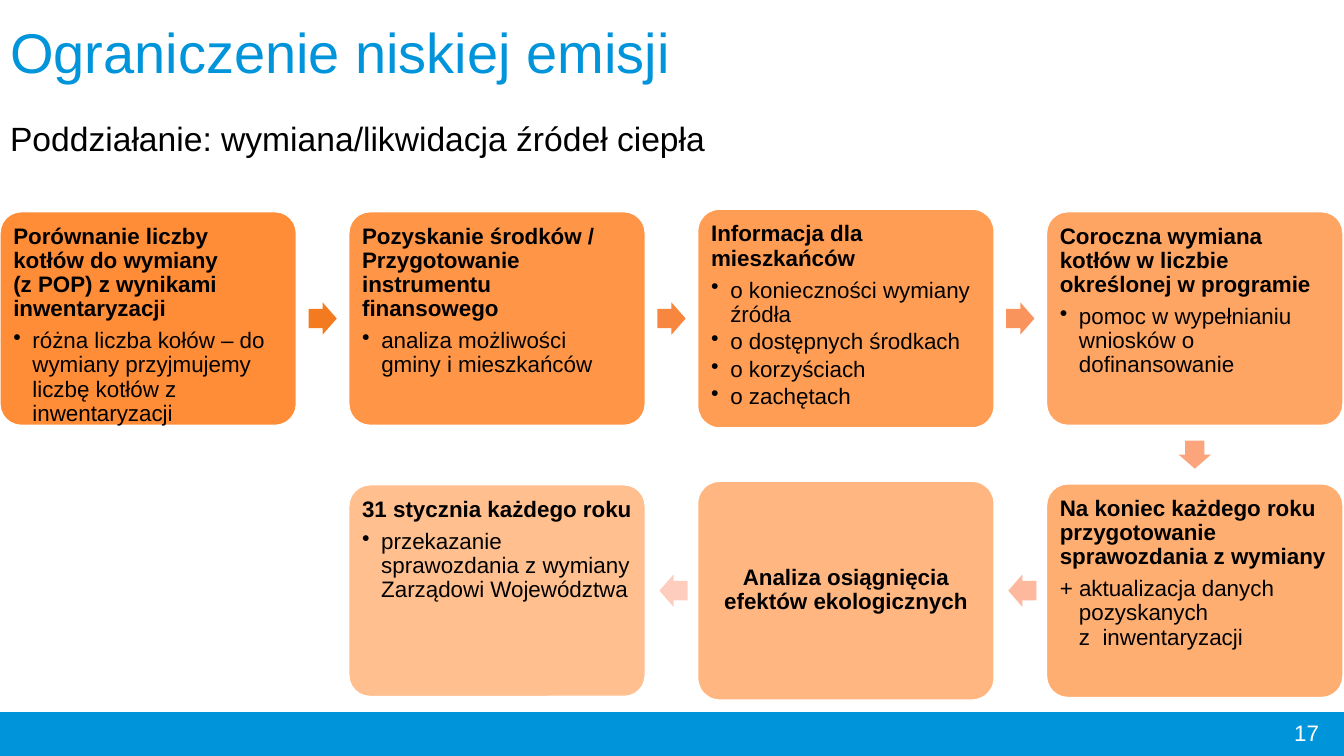
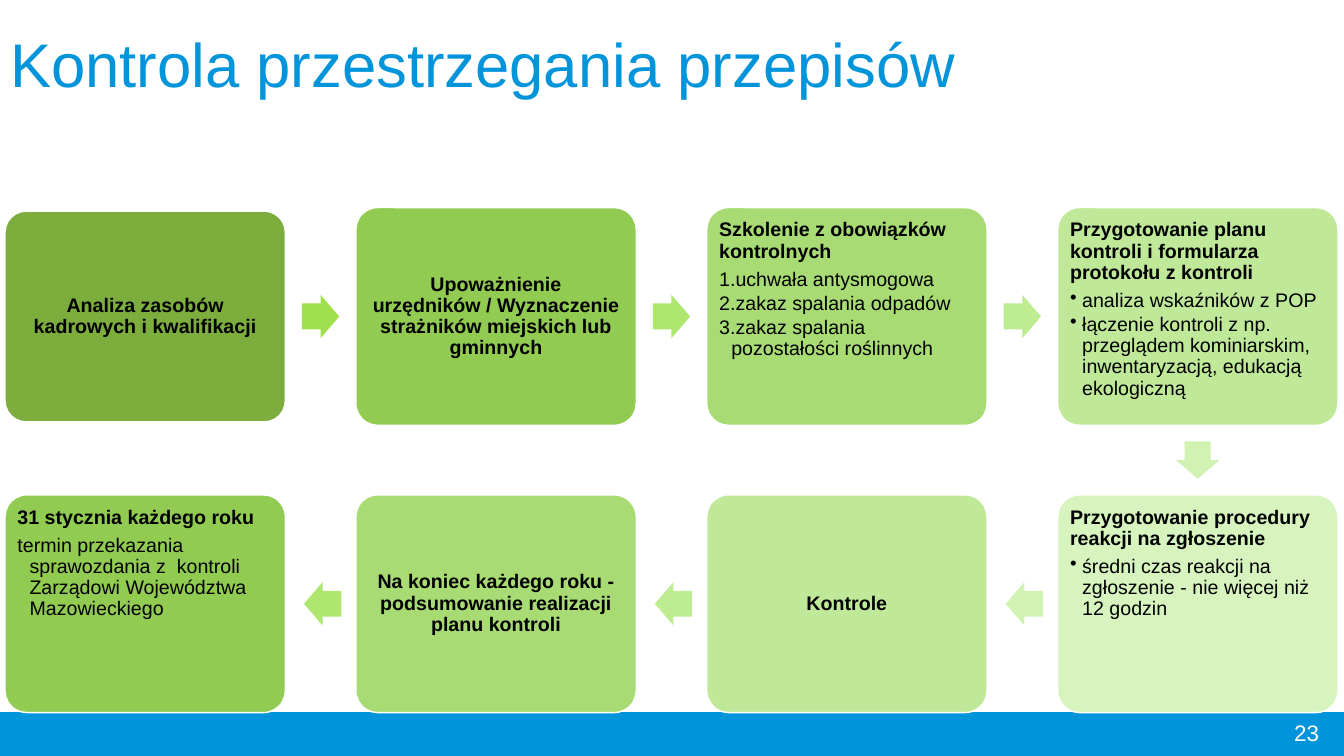
from dataclasses import dataclass

from pptx import Presentation
from pptx.dml.color import RGBColor
from pptx.enum.shapes import MSO_SHAPE
from pptx.enum.text import MSO_ANCHOR, MSO_AUTO_SIZE, PP_ALIGN
from pptx.oxml.xmlchemy import OxmlElement
from pptx.shapes.autoshape import Shape
from pptx.slide import Slide
from pptx.text.text import TextFrame
from pptx.util import Inches, Pt

RECTANGLE = MSO_SHAPE.RECTANGLE
ROUNDED = MSO_SHAPE.ROUNDED_RECTANGLE
RIGHT_ARROW = MSO_SHAPE.RIGHT_ARROW
LEFT_ARROW = MSO_SHAPE.LEFT_ARROW
DOWN_ARROW = MSO_SHAPE.DOWN_ARROW
TOP, MIDDLE = MSO_ANCHOR.TOP, MSO_ANCHOR.MIDDLE
LEFT, CENTER, RIGHT = PP_ALIGN.LEFT, PP_ALIGN.CENTER, PP_ALIGN.RIGHT
NO_AUTOFIT = MSO_AUTO_SIZE.NONE

FONT = "Arial"
COLORS = {
    "blue": "0094DA",
    "orange": "FF8021",
    "black": "000000",
    "white": "FFFFFF",
    "green_1": "7CAD3D",
    "green_2": "92CB51",
    "green_3": "A8DB73",
    "green_4": "BFE998",
    "green_5": "D7F4BF",
}
SLIDE_WIDTH, SLIDE_HEIGHT = 13.33, 7.5
BAND_TOP = 7.07
COLUMNS = 4


@dataclass
class Step:
    heading: str
    height: float
    fill: str
    items: tuple[str, ...] = ()
    bullet: str = "•"
    opacity: int = 100


@dataclass
class Flow:
    left: float
    pitch: float
    box_width: float
    row_centers: tuple[float, float]
    arrow_length: float
    arrow_breadth: float
    font_size: int
    inset: float
    indent: float
    arrow_colors: tuple[str, ...]
    steps: tuple[Step, ...]


@dataclass
class TitleLine:
    text: str
    size: int
    color: str
    space_before: float = 0


@dataclass
class Page:
    number: str
    title_top: float
    title_width: float
    title_height: float
    title_lines: tuple[TitleLine, ...]
    flow: Flow


def rgb(color: str) -> RGBColor:
    return RGBColor.from_string(COLORS.get(color, color))


def add_text(frame: TextFrame, text: str, *, size: float, color: str = "black",
             bold: bool = False, align: PP_ALIGN = LEFT, line_spacing: float = 0.9,
             space_before: float = 0, space_after: float = 0,
             indent: float = 0, bullet: str = "") -> None:
    first = frame.paragraphs[0]
    paragraph = frame.add_paragraph() if first.runs else first
    paragraph.text = text
    properties = paragraph._p.get_or_add_pPr()
    if indent:
        properties.set("marL", str(Inches(indent)))
        properties.set("indent", str(Inches(-indent)))
    if bullet == "1.":
        marker = OxmlElement("a:buAutoNum")
        marker.set("type", "arabicPeriod")
    elif bullet:
        marker = OxmlElement("a:buChar")
        marker.set("char", bullet)
    else:
        marker = OxmlElement("a:buNone")
    properties.append(marker)
    paragraph.alignment = align
    paragraph.line_spacing = line_spacing
    paragraph.space_before = Pt(space_before)
    paragraph.space_after = Pt(space_after)
    for run in paragraph.runs:
        run.font.name = FONT
        run.font.size = Pt(size)
        run.font.bold = bold
        run.font.color.rgb = rgb(color)


def add_filled_shape(slide: Slide, kind: MSO_SHAPE, left: float, top: float,
                     width: float, height: float, fill: str, line: str = "",
                     opacity: int = 100) -> Shape:
    shape = slide.shapes.add_shape(
        kind, Inches(left), Inches(top), Inches(width), Inches(height))
    shape.shadow.inherit = False
    shape.fill.solid()
    shape.fill.fore_color.rgb = rgb(fill)
    if opacity < 100:
        alpha = OxmlElement("a:alpha")
        alpha.set("val", str(opacity * 1000))
        shape._element.spPr.find(".//{*}srgbClr").append(alpha)
    if line:
        shape.line.color.rgb = rgb(line)
        shape.line.width = Pt(1)
    else:
        shape.line.fill.background()
    return shape


def add_step(slide: Slide, flow: Flow, step: Step, center_x: float, center_y: float) -> None:
    box = add_filled_shape(
        slide, ROUNDED, center_x - flow.box_width / 2, center_y - step.height / 2,
        flow.box_width, step.height, step.fill, "white", step.opacity)
    box.adjustments[0] = 0.1
    frame = box.text_frame
    frame.word_wrap = True
    frame.vertical_anchor = TOP if step.items else MIDDLE
    frame.margin_left = frame.margin_right = Inches(flow.inset)
    frame.margin_top = frame.margin_bottom = Inches(flow.inset)
    size = flow.font_size
    add_text(frame, step.heading, size=size, bold=True,
             align=LEFT if step.items else CENTER, space_after=0.35 * size)
    for item in step.items:
        add_text(frame, item, size=size, space_after=0.15 * size,
                 indent=flow.indent, bullet=step.bullet)


def add_flow(slide: Slide, flow: Flow) -> None:
    centers = []
    for index, step in enumerate(flow.steps):
        row, position = divmod(index, COLUMNS)
        column = COLUMNS - 1 - position if row else position
        center_x = flow.left + column * flow.pitch + flow.box_width / 2
        centers.append((center_x, flow.row_centers[row]))
        add_step(slide, flow, step, *centers[-1])
    for start, end, color in zip(centers, centers[1:], flow.arrow_colors):
        width, height = flow.arrow_length, flow.arrow_breadth
        center_x, center_y = (start[0] + end[0]) / 2, (start[1] + end[1]) / 2
        if start[1] != end[1]:
            kind, width, height = DOWN_ARROW, height, width
        elif end[0] > start[0]:
            kind = RIGHT_ARROW
        else:
            kind = LEFT_ARROW
            center_x += 0.02
        arrow = add_filled_shape(slide, kind, center_x - width / 2,
                                 center_y - height / 2, width, height, color)
        arrow.adjustments[0] = 0.6
        arrow.adjustments[1] = 0.5


def add_page(presentation: Presentation, page: Page) -> None:
    slide = presentation.slides.add_slide(presentation.slide_layouts[5])
    title = slide.shapes.title
    title.left, title.top = Inches(0), Inches(page.title_top)
    title.width, title.height = Inches(page.title_width), Inches(page.title_height)
    title.text_frame.auto_size = NO_AUTOFIT
    title.text_frame.vertical_anchor = TOP
    for line in page.title_lines:
        add_text(title.text_frame, line.text, size=line.size, color=line.color,
                 space_before=line.space_before)

    add_filled_shape(slide, RECTANGLE, 0, BAND_TOP, SLIDE_WIDTH,
                     SLIDE_HEIGHT - BAND_TOP, "blue", "blue")
    number = slide.shapes.add_textbox(
        Inches(10.18), Inches(BAND_TOP), Inches(3), Inches(0.4))
    number.text_frame.word_wrap = True
    number.text_frame.vertical_anchor = MIDDLE
    add_text(number.text_frame, page.number, size=16, color="white",
             align=RIGHT, line_spacing=1)
    add_flow(slide, page.flow)


EMISSION_FLOW = Flow(
    left=0, pitch=3.46, box_width=2.94, row_centers=(3.16, 5.86),
    arrow_length=0.28, arrow_breadth=0.32, font_size=16, inset=0.07, indent=0.19,
    arrow_colors=("F47A20", "F7863E", "FA945D", "FCA57C", "FEB89D", "FFCDBD"),
    steps=(
        Step("Porównanie liczby kotłów do wymiany \n(z POP) z wynikami inwentaryzacji",
             2.12, "orange",
             ("różna liczba kołów – do wymiany przyjmujemy liczbę kotłów z inwentaryzacji",),
             opacity=90),
        Step("Pozyskanie środków / Przygotowanie instrumentu finansowego",
             2.12, "orange", ("analiza możliwości gminy i mieszkańców",), opacity=83),
        Step("Informacja dla mieszkańców", 2.17, "orange",
             ("o konieczności wymiany źródła", "o dostępnych środkach",
              "o korzyściach", "o zachętach"), opacity=77),
        Step("Coroczna wymiana kotłów w liczbie określonej w programie",
             2.12, "orange", ("pomoc w wypełnianiu wniosków o dofinansowanie",),
             opacity=70),
        Step("Na koniec każdego roku przygotowanie sprawozdania z wymiany",
             2.12, "orange",
             ("+ aktualizacja danych pozyskanych \nz  inwentaryzacji",),
             bullet="", opacity=63),
        Step("Analiza osiągnięcia efektów ekologicznych", 2.17, "orange", opacity=57),
        Step("31 stycznia każdego roku", 2.1, "orange",
             ("przekazanie sprawozdania z wymiany Zarządowi Województwa",), opacity=50),
    ),
)

CONTROL_FLOW = Flow(
    left=0.05, pitch=3.48, box_width=2.78, row_centers=(3.14, 5.99),
    arrow_length=0.37, arrow_breadth=0.43, font_size=14, inset=0.06, indent=0.12,
    arrow_colors=("A0E04E", "AEE66F", "BEEC91", "D0F2B2", "D0F2B2", "BEEC91", "AEE66F"),
    steps=(
        Step("Analiza zasobów kadrowych i kwalifikacji", 2.09, "green_1"),
        Step("Upoważnienie urzędników / Wyznaczenie strażników miejskich lub gminnych",
             2.16, "green_2"),
        Step("Szkolenie z obowiązków kontrolnych", 2.16, "green_3",
             ("uchwała antysmogowa", "zakaz spalania odpadów",
              "zakaz spalania pozostałości roślinnych"), bullet="1."),
        Step("Przygotowanie planu kontroli i formularza protokołu z kontroli",
             2.16, "green_4",
             ("analiza wskaźników z POP",
              "łączenie kontroli z np. przeglądem kominiarskim, inwentaryzacją, "
              "edukacją ekologiczną")),
        Step("Przygotowanie procedury reakcji na zgłoszenie", 2.16, "green_5",
             ("średni czas reakcji na zgłoszenie - nie więcej niż 12 godzin",)),
        Step("Kontrole", 2.16, "green_4"),
        Step("Na koniec każdego roku - podsumowanie realizacji planu kontroli",
             2.16, "green_3"),
        Step("31 stycznia każdego roku", 2.16, "green_2",
             ("termin przekazania sprawozdania z  kontroli Zarządowi Województwa "
              "Mazowieckiego",), bullet=""),
    ),
)

PAGES = (
    Page("17", 0.2, 10.37, 1.46, (
        TitleLine("Ograniczenie niskiej emisji", 40, "blue"),
        TitleLine("Poddziałanie: wymiana/likwidacja źródeł ciepła", 24, "black", 26),
    ), EMISSION_FLOW),
    Page("23", 0.29, 9.66, 1.03, (
        TitleLine("Kontrola przestrzegania przepisów", 44, "blue"),
    ), CONTROL_FLOW),
)


def main() -> None:
    presentation = Presentation()
    presentation.slide_width = Inches(SLIDE_WIDTH)
    presentation.slide_height = Inches(SLIDE_HEIGHT)
    for page in PAGES:
        add_page(presentation, page)
    presentation.save("out.pptx")


if __name__ == "__main__":
    main()
